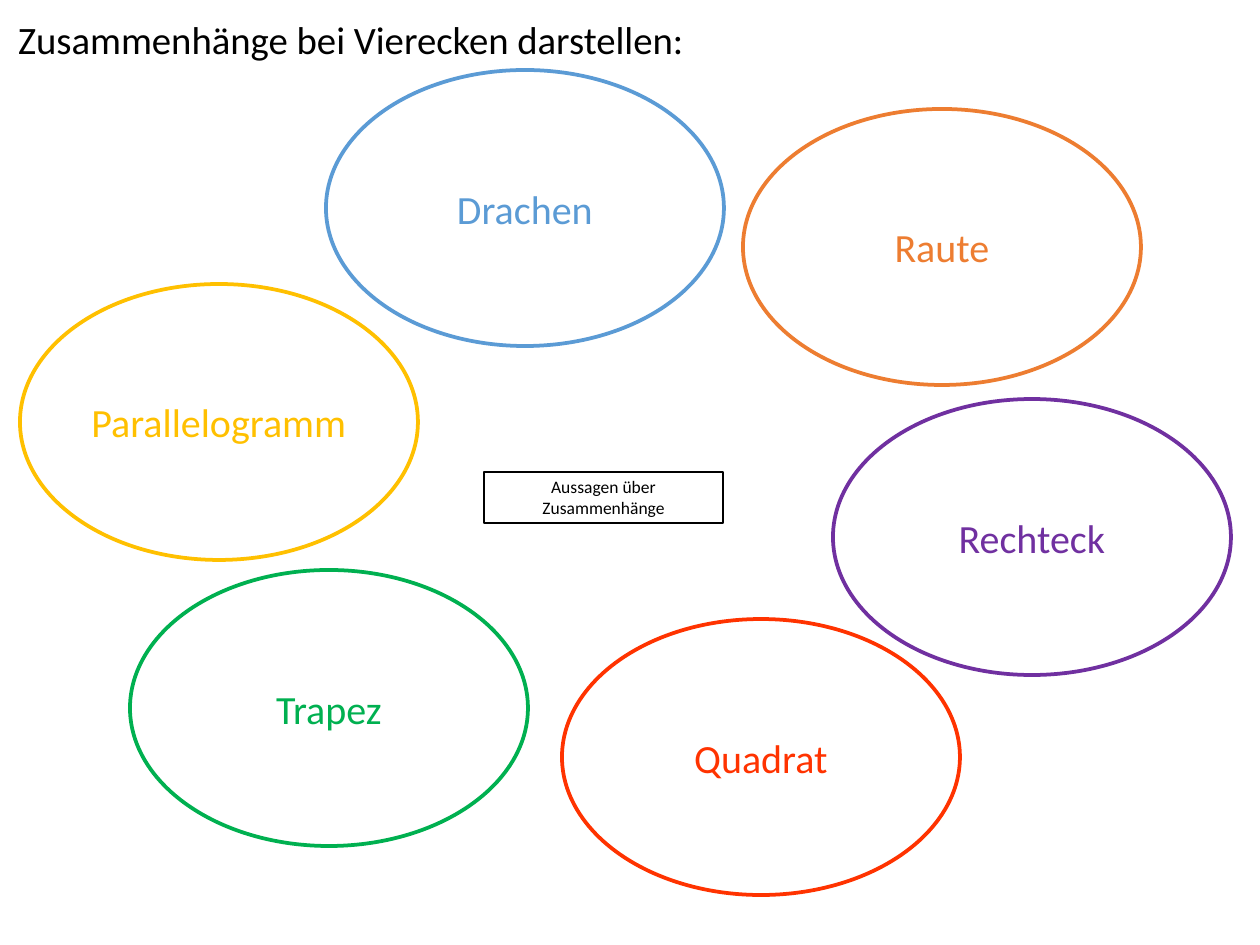
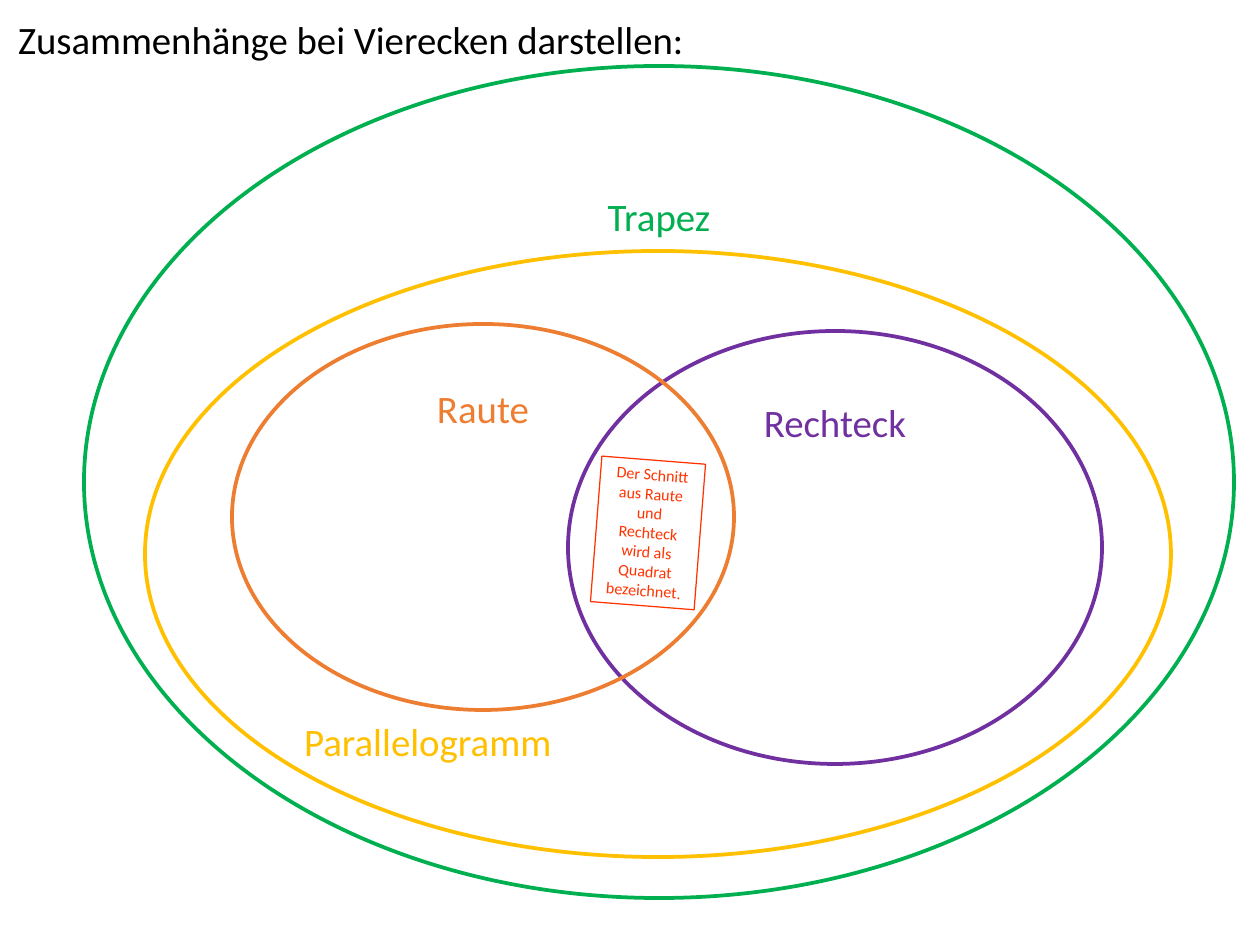
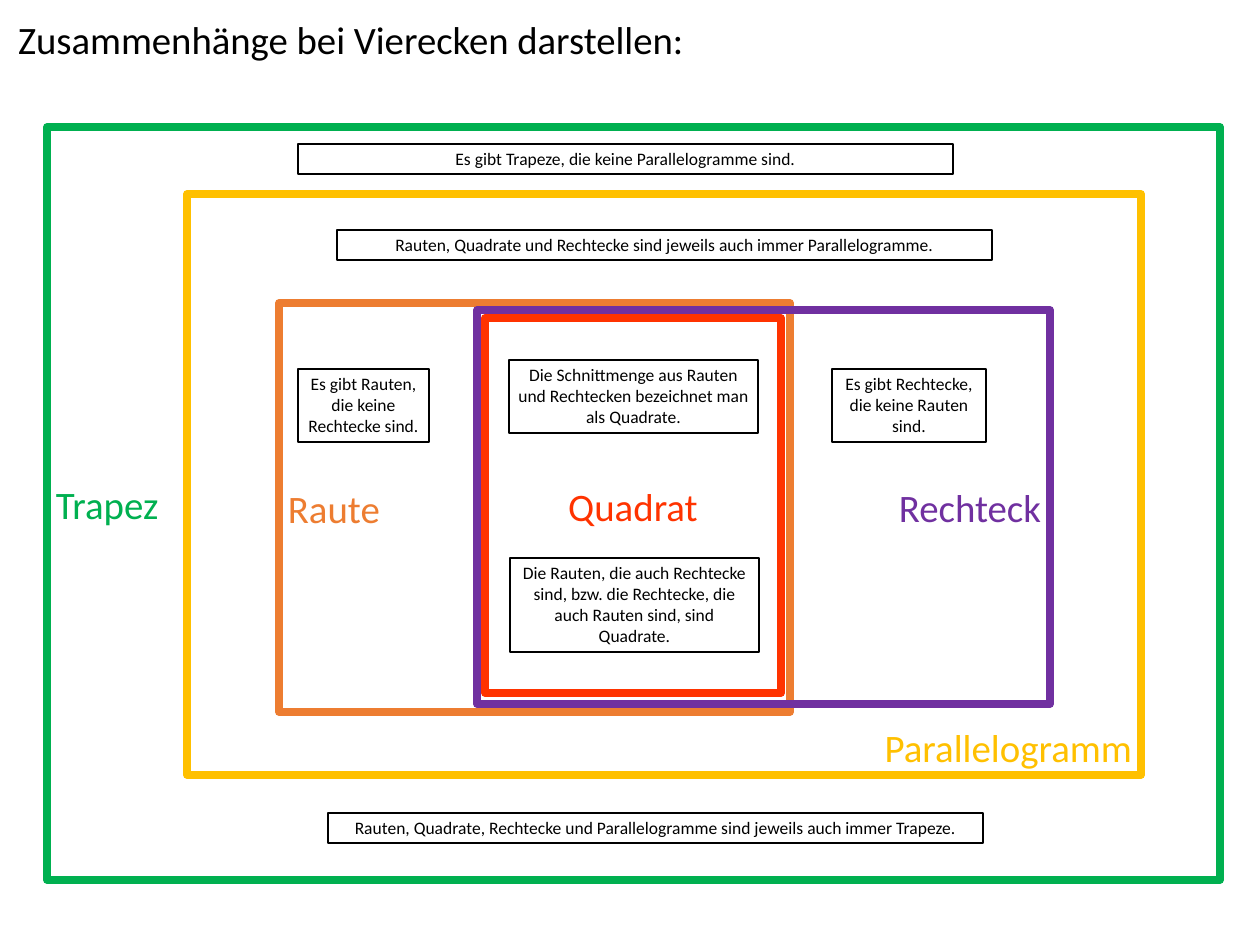
import pptx
import pptx.dml.color
import pptx.enum.shapes
import pptx.enum.text
import pptx.util

SCALE = 10160
TITLE = "Zusammenhänge bei Vierecken darstellen:"
FONT = "Calibri"
COLORS = {
    "Drachen": "5B9BD5",
    "Raute": "ED7D31",
    "Parallelogramm": "FFC000",
    "Trapez": "00B050",
    "Rechteck": "7030A0",
    "Quadrat": "FF3300",
    "ink": "000000",
    "paper": "FFFFFF",
}
KINDS = pptx.enum.shapes.MSO_SHAPE
ALIGN = pptx.enum.text.PP_ALIGN
ANCHOR = pptx.enum.text.MSO_ANCHOR
FIT = pptx.enum.text.MSO_AUTO_SIZE


def color(name):
    return pptx.dml.color.RGBColor.from_string(COLORS[name])


class Board:
    def __init__(self, width, height):
        self.deck = pptx.Presentation()
        self.deck.slide_width = width * SCALE
        self.deck.slide_height = height * SCALE
        self.page = None

    def add_page(self):
        self.page = self.deck.slides.add_slide(self.deck.slide_layouts[5])
        title = self.page.shapes.title
        title.left, title.top, title.width, title.height = (
            length * SCALE for length in (9, 11, 712, 56))
        self.label(title, TITLE, 31, "ink", ALIGN.LEFT, ANCHOR.TOP)

    def label(self, shape, text, size, tone, align, anchor, fit=FIT.NONE):
        frame = shape.text_frame
        frame.text = text
        frame.word_wrap = True
        frame.auto_size = fit
        frame.vertical_anchor = anchor
        para = frame.paragraphs[0]
        para.alignment = align
        font = para.runs[0].font
        font.name = FONT
        font.size = pptx.util.Pt(size)
        font.color.rgb = color(tone)

    def outline(self, kind, area, tone, weight):
        shape = self.page.shapes.add_shape(kind, *(length * SCALE for length in area))
        shape.shadow.inherit = False
        shape.fill.background()
        shape.line.color.rgb = color(tone)
        shape.line.width = pptx.util.Pt(weight)
        return shape

    def ellipse(self, name, area, size=31.1, align=ALIGN.CENTER, anchor=ANCHOR.TOP):
        shape = self.outline(KINDS.OVAL, area, name, 3)
        self.label(shape, name, size, name, align, anchor)

    def frame(self, name, area, align, anchor=ANCHOR.MIDDLE):
        shape = self.outline(KINDS.RECTANGLE, area, name, 6)
        self.label(shape, name, 31.1, name, align, anchor)

    def note(self, text, area, tone="ink", size=14, angle=0):
        box = self.outline(KINDS.RECTANGLE, area, tone, 1)
        box.fill.solid()
        box.fill.fore_color.rgb = color("paper")
        box.rotation = angle
        self.label(box, text, size, tone, ALIGN.CENTER, ANCHOR.TOP, FIT.SHAPE_TO_FIT_TEXT)


def single_sets(board):
    board.add_page()
    corners = {
        "Drachen": (326, 70),
        "Raute": (743, 109),
        "Parallelogramm": (20, 284),
        "Trapez": (130, 570),
        "Rechteck": (833, 399),
        "Quadrat": (562, 619),
    }
    for name, corner in corners.items():
        board.ellipse(name, (*corner, 398, 276), 32, anchor=ANCHOR.MIDDLE)
    board.note("Aussagen über Zusammenhänge", (484, 472, 239, 51))


def nested_ellipses(board):
    board.add_page()
    board.ellipse("Parallelogramm", (145, 251, 1026, 606),
                  align=ALIGN.LEFT, anchor=ANCHOR.BOTTOM)
    board.ellipse("Rechteck", (568, 331, 534, 433))
    board.ellipse("Trapez", (84, 66, 1150, 832))
    board.ellipse("Raute", (232, 324, 502, 386))
    board.note("Der Schnitt aus Raute und Rechteck wird als Quadrat bezeichnet.",
               (596, 460, 104, 146), "Quadrat", 12.9, 4.5)


def nested_frames(board):
    board.add_page()
    board.frame("Raute", (279, 303, 511, 409), ALIGN.LEFT)
    board.frame("Parallelogramm", (187, 194, 954, 581), ALIGN.RIGHT, ANCHOR.BOTTOM)
    board.frame("Trapez", (47, 127, 1173, 753), ALIGN.LEFT)
    board.frame("Rechteck", (477, 310, 573, 394), ALIGN.RIGHT)
    board.frame("Quadrat", (485, 318, 296, 375), ALIGN.CENTER)
    notes = [
        ("Rauten, Quadrate, Rechtecke und Parallelogramme sind jeweils auch immer Trapeze.",
         (328, 813, 655, 30)),
        ("Rauten, Quadrate und Rechtecke sind jeweils auch immer Parallelogramme.",
         (337, 230, 655, 30)),
        ("Die Rauten, die auch Rechtecke sind, bzw. die Rechtecke, die auch Rauten sind, "
         "sind Quadrate.", (510, 558, 249, 94)),
        ("Die Schnittmenge aus Rauten und Rechtecken bezeichnet man als Quadrate.",
         (509, 360, 249, 73)),
        ("Es gibt Trapeze, die keine Parallelogramme sind.", (298, 144, 655, 30)),
        ("Es gibt Rauten, die keine Rechtecke sind.", (298, 369, 131, 73)),
        ("Es gibt Rechtecke, die keine Rauten sind.", (832, 369, 154, 73)),
    ]
    for text, area in notes:
        board.note(text, area)


def main():
    board = Board(1260, 945)
    single_sets(board)
    nested_ellipses(board)
    nested_frames(board)
    board.deck.save("out.pptx")


if __name__ == "__main__":
    main()
